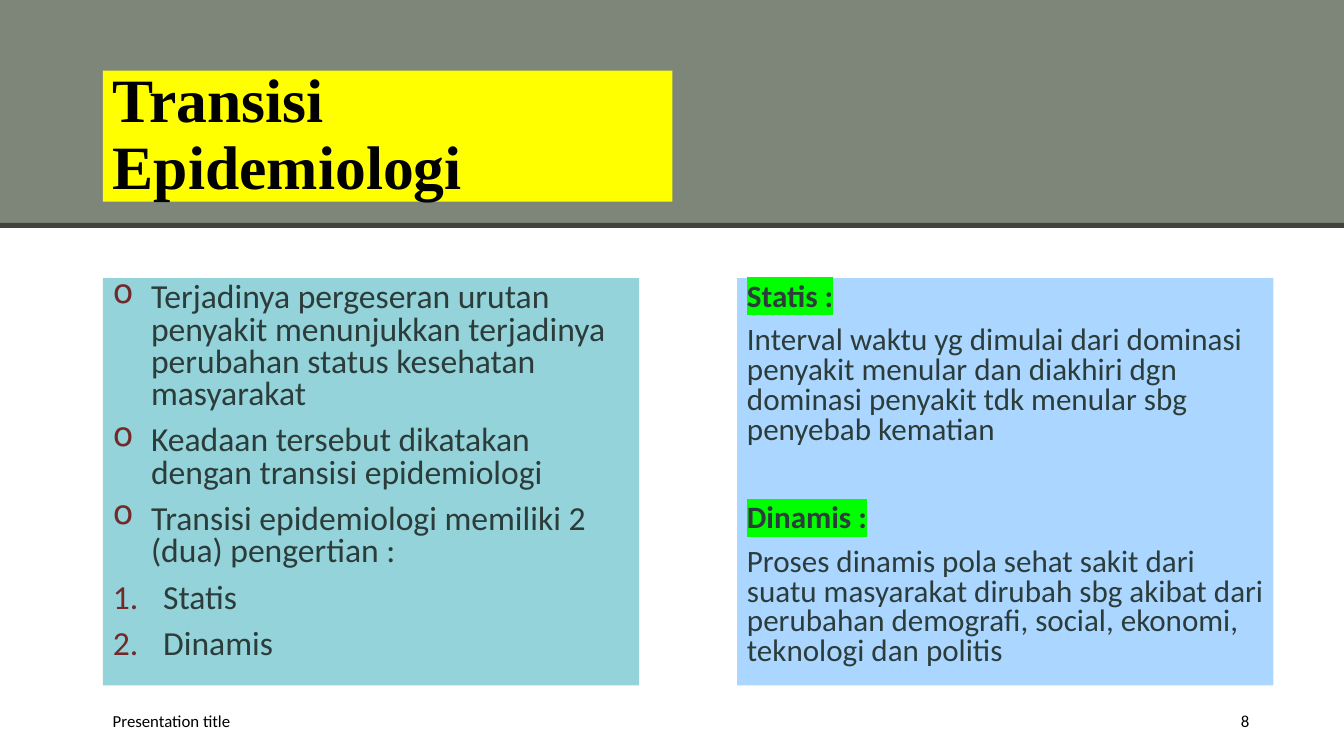
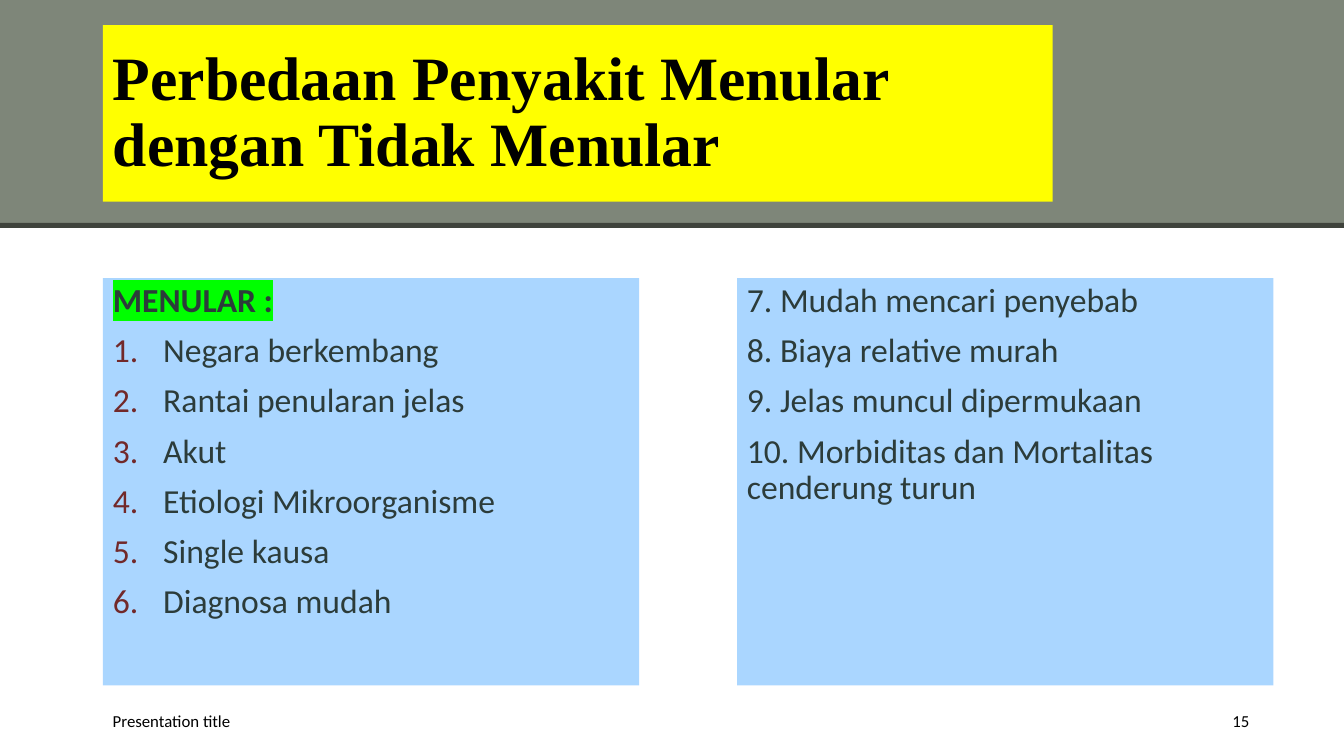
"""Build two slides on epidemiological transition and communicable diseases."""
import pptx
import pptx.dml.color
import pptx.enum.shapes
import pptx.enum.text
import pptx.oxml.ns
import pptx.util
from lxml import etree

Inches = pptx.util.Inches
Pt = pptx.util.Pt
ALIGN = pptx.enum.text.PP_ALIGN
ANCHOR = pptx.enum.text.MSO_ANCHOR

BAND, RULE, YELLOW = "7E8679", "3F433C", "FFFF00"
TEAL, BLUE, GREEN = "93D3D9", "AAD6FF", "00FF00"
INK, BULLET, BLACK = "2C3C3A", "72292A", "000000"
BODY_FONT, TITLE_FONT = "Calibri", "Times New Roman"

WIDTH, MARGIN = 13.33, 1.02
PANEL_TOP, PANEL_W, PANEL_H = 2.76, 5.32, 4.04
PANEL_LEFTS = (MARGIN, 7.31)
TITLE_BOTTOM = 2
FOOTER_TOP, FOOTER_H = 6.95, 0.4
FOOTER = "Presentation title"

STYLES = {
    "plain": {},
    "head": {"bold": True, "highlight": GREEN},
    "next_head": {"bold": True, "highlight": GREEN, "before": 41.5},
    "bullet": {"bullet": ("buChar", "char", "o"), "indent": 0.38},
    "number": {"bullet": ("buAutoNum", "type", "arabicPeriod"), "indent": 0.5},
}

SLIDES = [
    {
        "title": "Transisi Epidemiologi", "title_size": (5.65, 1.3),
        "number": "8", "spacing": 0.8,
        "panels": [
            (TEAL, 24, [
                ("bullet", "Terjadinya pergeseran urutan penyakit menunjukkan "
                           "terjadinya perubahan status kesehatan masyarakat"),
                ("bullet", "Keadaan tersebut dikatakan dengan transisi epidemiologi"),
                ("bullet", "Transisi epidemiologi memiliki 2 (dua) pengertian :"),
                ("number", "Statis"),
                ("number", "Dinamis"),
            ]),
            (BLUE, 22.2, [
                ("head", "Statis :"),
                ("plain", "Interval waktu yg dimulai dari dominasi penyakit menular dan "
                          "diakhiri dgn dominasi penyakit tdk menular sbg penyebab kematian"),
                ("next_head", "Dinamis :"),
                ("plain", "Proses dinamis pola sehat sakit dari suatu masyarakat dirubah sbg "
                          "akibat dari perubahan demografi, social, ekonomi, teknologi dan politis"),
            ]),
        ],
    },
    {
        "title": "Perbedaan Penyakit Menular dengan Tidak Menular", "title_size": (9.42, 1.75),
        "number": "15", "spacing": 0.9,
        "panels": [
            (BLUE, 24, [
                ("head", "MENULAR :"),
                ("number", "Negara berkembang"),
                ("number", "Rantai penularan jelas"),
                ("number", "Akut"),
                ("number", "Etiologi Mikroorganisme"),
                ("number", "Single kausa"),
                ("number", "Diagnosa mudah"),
            ]),
            (BLUE, 24, [
                ("plain", "7. Mudah mencari penyebab"),
                ("plain", "8. Biaya relative murah"),
                ("plain", "9. Jelas muncul dipermukaan"),
                ("plain", "10. Morbiditas dan Mortalitas cenderung turun"),
            ]),
        ],
    },
]


def rgb(value):
    return pptx.dml.color.RGBColor.from_string(value)


def paint(sp, color):
    sp.fill.solid()
    sp.fill.fore_color.rgb = rgb(color)


def sub(parent, tag, **attrs):
    return etree.SubElement(parent, pptx.oxml.ns.qn(tag), attrs)


def add_text(p, text, size=24, font=BODY_FONT, color=INK, bold=False, highlight=None,
             bullet=None, indent=0, before=0, spacing=1.0, align=ALIGN.LEFT):
    if bullet:
        tag, key, value = bullet
        pPr = p._p.get_or_add_pPr()
        pPr.set("marL", str(Inches(indent)))
        pPr.set("indent", str(-Inches(indent)))
        sub(sub(pPr, "a:buClr"), "a:srgbClr", val=BULLET)
        sub(pPr, "a:" + tag, **{key: value})
    p.alignment = align
    p.line_spacing = spacing
    p.space_before = Pt(before)
    r = p.add_run()
    r.text = text
    r.font.size, r.font.name, r.font.bold = Pt(size), font, bold
    r.font.color.rgb = rgb(color)
    if highlight:
        mark = sub(r.font._element, "a:highlight")
        sub(mark, "a:srgbClr", val=highlight)
        r.font._element.find(pptx.oxml.ns.qn("a:solidFill")).addnext(mark)


def add_box(s, left, top, width, height, anchor=ANCHOR.TOP):
    sp = s.shapes.add_textbox(Inches(left), Inches(top), Inches(width), Inches(height))
    sp.text_frame.word_wrap = True
    sp.text_frame.vertical_anchor = anchor
    return sp


def add_bands(s, layout):
    for i, (top, height, color) in enumerate([(0, 2.24, BAND), (2.21, 0.05, RULE)]):
        sp = s.shapes.add_shape(pptx.enum.shapes.MSO_SHAPE.RECTANGLE,
                                0, Inches(top), Inches(WIDTH), Inches(height))
        sp.shadow.inherit = False
        paint(sp, color)
        sp.line.fill.background()
        layout.shapes.element.insert(2 + i, sp.element)


def add_title(s, text, width, height):
    sp = s.shapes.title
    sp.left, sp.top = Inches(MARGIN), Inches(TITLE_BOTTOM - height)
    sp.width, sp.height = Inches(width), Inches(height)
    paint(sp, YELLOW)
    tf = sp.text_frame
    tf.word_wrap = True
    tf.auto_size = pptx.enum.text.MSO_AUTO_SIZE.NONE
    tf.vertical_anchor = ANCHOR.MIDDLE
    add_text(tf.paragraphs[0], text, size=44, font=TITLE_FONT, color=BLACK, bold=True, spacing=0.9)


def add_panel(s, left, color, size, items, spacing):
    sp = add_box(s, left, PANEL_TOP, PANEL_W, PANEL_H)
    paint(sp, color)
    tf = sp.text_frame
    for i, (style, text) in enumerate(items):
        p = tf.add_paragraph() if i else tf.paragraphs[0]
        layout = {"before": 10 if i else 0, "size": size, "spacing": spacing}
        add_text(p, text, **{**layout, **STYLES[style]})


def add_footer(s, number):
    for left, width, text, align in [(MARGIN, 4.5, FOOTER, ALIGN.LEFT),
                                     (11.63, 0.86, number, ALIGN.RIGHT)]:
        sp = add_box(s, left, FOOTER_TOP, width, FOOTER_H, ANCHOR.MIDDLE)
        add_text(sp.text_frame.paragraphs[0], text, size=12, color=BLACK, align=align)


def main():
    prs = pptx.Presentation()
    prs.slide_width, prs.slide_height = Inches(WIDTH), Inches(7.5)
    layout = prs.slide_layouts.get_by_name("Title Only")
    for i, content in enumerate(SLIDES):
        s = prs.slides.add_slide(layout)
        if i == 0:
            add_bands(s, layout)
        add_title(s, content["title"], *content["title_size"])
        for left, panel in zip(PANEL_LEFTS, content["panels"]):
            add_panel(s, left, *panel, content["spacing"])
        add_footer(s, content["number"])
    prs.save("out.pptx")


if __name__ == "__main__":
    main()
